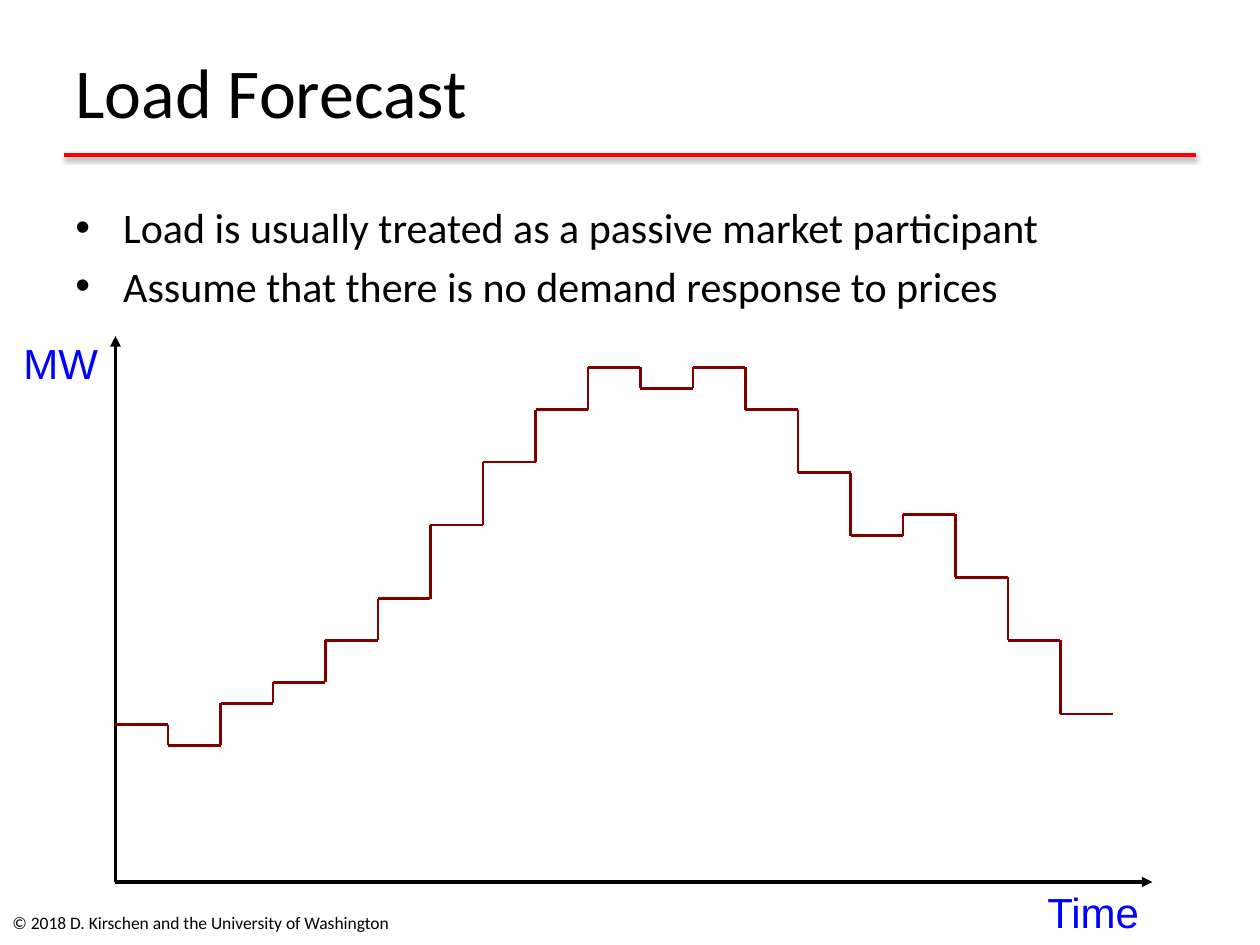
from itertools import pairwise

from lxml.etree import SubElement
from pptx import Presentation
from pptx.dml.color import RGBColor
from pptx.enum.shapes import MSO_CONNECTOR as Conn
from pptx.enum.text import MSO_ANCHOR as Anchor, PP_ALIGN as Align
from pptx.oxml.ns import qn
from pptx.util import Inches, Pt

BLACK = RGBColor(0, 0, 0)
RED = RGBColor(255, 0, 0)
BLUE = RGBColor(0, 0, 255)
MAROON = RGBColor(128, 0, 0)

WIDE, HIGH = 10, 7.5
UNIT = 1 / 12  # grid pitch in inches
HOUR = 5  # grid columns in one load step
# Load of each hour, in grid rows above the time axis
LOADS = [15, 13, 17, 19, 23, 27, 34, 40, 45, 49,
         47, 49, 45, 39, 33, 35, 29, 23, 16]

HEAD = dict(name="Calibri", size=Pt(40))
BODY = dict(name="Calibri", size=Pt(24))
NOTE = dict(name="Calibri", size=Pt(10))
AXIS = dict(name="Arial", size=Pt(24))


def style(par, font, color, **form):
    for key, val in font.items():
        setattr(par.font, key, val)
    par.font.color.rgb = color
    for key, val in form.items():
        setattr(par, key, val)


def place(shape, box):
    for key, val in zip(("left", "top", "width", "height"), box):
        setattr(shape, key, Inches(val))


def text(slide, box, words, font, color, wrap=True, anchor=Anchor.TOP, **form):
    frame = slide.shapes.add_textbox(*map(Inches, box)).text_frame
    frame.word_wrap, frame.vertical_anchor = wrap, anchor
    frame.text = words
    for par in frame.paragraphs:
        style(par, font, color, **form)
    return frame


def line(shapes, start, end, color, width, arrow=False):
    """Add a straight line and return its empty effect list."""
    link = shapes.add_connector(Conn.STRAIGHT, *map(Inches, (*start, *end)))
    link.line.color.rgb, link.line.width = color, Pt(width)
    if arrow:
        SubElement(link.line._get_or_add_ln(), qn("a:tailEnd"), type="triangle")
    return SubElement(link._element.spPr, qn("a:effectLst"))


def header(slide, box):
    left, top, width, height = box
    title = slide.shapes.title
    place(title, box)
    title.text_frame.text = "Load Forecast"
    title.text_frame.vertical_anchor = Anchor.MIDDLE
    style(title.text_frame.paragraphs[0], HEAD, BLACK, alignment=Align.LEFT)
    rule = top + height - 0.07
    glow = line(slide.shapes, (left + 0.01, rule), (left + width - 0.01, rule),
                RED, 2)
    shade = SubElement(glow, qn("a:outerShdw"), blurRad=str(Pt(3.1)),
                       dist=str(Pt(1.6)), dir="5400000", rotWithShape="0")
    tint = SubElement(shade, qn("a:srgbClr"), val="000000")
    SubElement(tint, qn("a:alpha"), val="38000")


def points(slide, box):
    words = "\n".join(["Load is usually treated as a passive market participant",
                       "Assume that there is no demand response to prices"])
    frame = text(slide, box, words, BODY, BLACK, space_before=Pt(4.8))
    for par in frame.paragraphs:
        props = par._p.get_or_add_pPr()
        props.set("marL", str(Inches(0.38)))
        props.set("indent", str(Inches(-0.38)))
        SubElement(props, qn("a:buFont"), typeface="Arial")
        SubElement(props, qn("a:buChar"), char="•")


def plot(slide, box):
    """Draw the axes and the load steps; the box is bounded by the axes."""
    left, top, width, height = box
    base, right = top + height, left + width
    for tip in ((left, top), (right, base)):
        line(slide.shapes, (left, base), tip, BLACK, 2, arrow=True)
    for words, spot in (("MW", (left - 0.83, top - 0.04, 0.79, 0.5)),
                        ("Time", (right - 0.94, base - 0.01, 0.94, 0.5))):
        text(slide, spot, words, AXIS, BLUE, wrap=False, alignment=Align.CENTER)
    steps = slide.shapes.add_group_shape().shapes
    dots = [(left + (i + side) * HOUR * UNIT, base - load * UNIT)
            for i, load in enumerate(LOADS) for side in (0, 1)]
    for start, end in pairwise(dots):
        line(steps, start, end, MAROON, 1.5)


def footer(slide, box):
    text(slide, box, "© 2018 D. Kirschen and the University of Washington",
         NOTE, BLACK, anchor=Anchor.MIDDLE)


def main():
    deck = Presentation()
    deck.slide_width, deck.slide_height = Inches(WIDE), Inches(HIGH)
    slide = deck.slides.add_slide(deck.slide_layouts[5])
    edge = 0.05 * WIDE
    header(slide, (edge, 0.13, 0.9 * WIDE, 1.17))
    points(slide, (edge, 1.55, 0.9 * WIDE, 1.1))
    plot(slide, (11 * UNIT, 32 * UNIT, 8.23, 52 * UNIT))
    footer(slide, (0, 0.95 * HIGH, 3.27, 0.4))
    deck.save("out.pptx")


if __name__ == "__main__":
    main()
